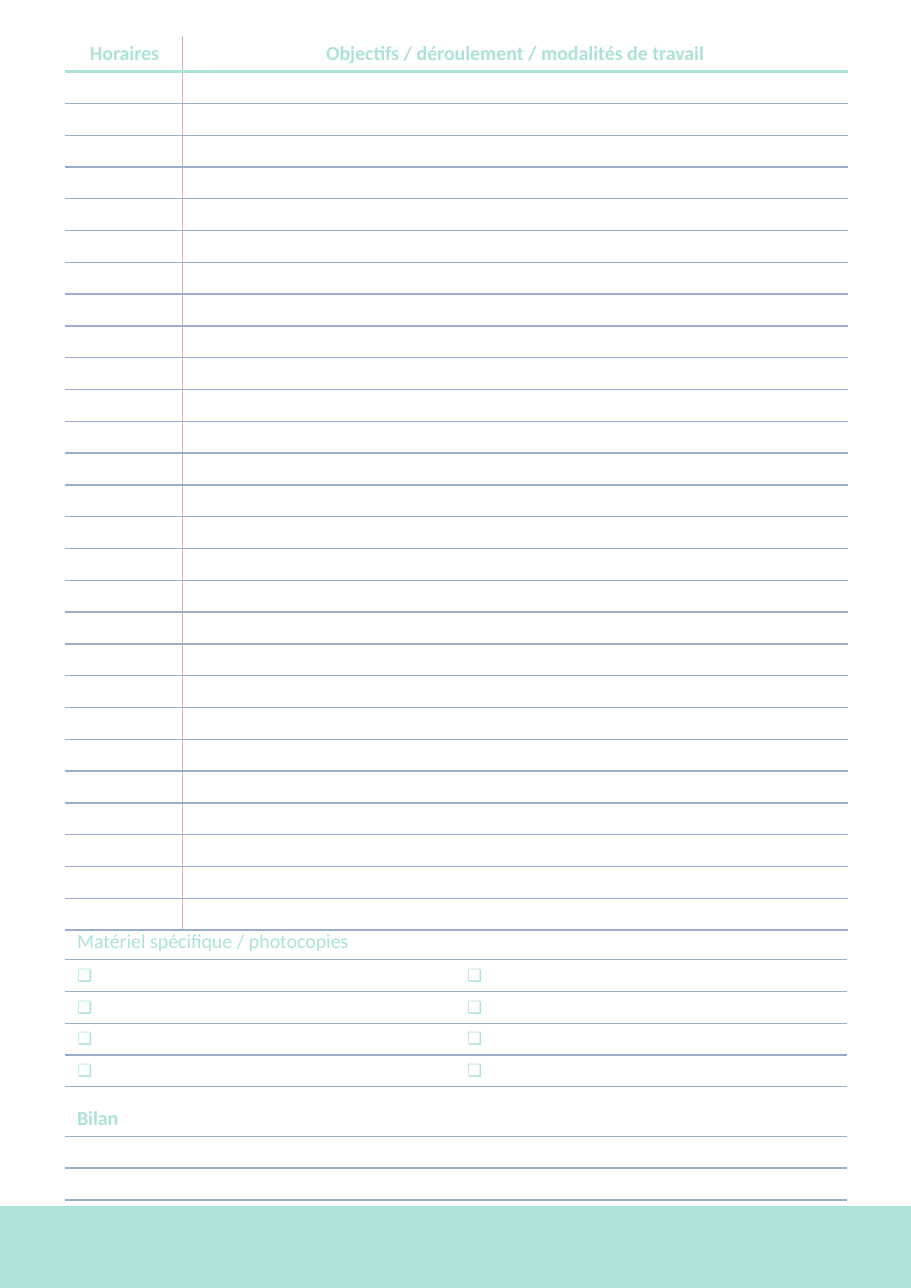
from lxml.etree import SubElement as Sub
from pptx import Presentation
from pptx.dml.color import RGBColor as Rgb
from pptx.enum.shapes import MSO_SHAPE as Shape
from pptx.enum.text import MSO_ANCHOR as Anchor, PP_ALIGN as Align
from pptx.oxml.ns import qn
from pptx.util import Inches, Pt

MINT, BLUE, PINK, WHITE = "ACE2D7", "9AADCD", "DCA9CC", "FFFFFF"
HEAD, GAP, STEP = 0.32, 0.13, 7.8 / 27


def paint(fmt, tone):
    """Give a fill one solid colour."""
    fmt.solid()
    fmt.fore_color.rgb = Rgb.from_string(tone)


def edge(cell, side, tone, width=1):
    """Draw one border of a cell."""
    line = Sub(cell._tc.get_or_add_tcPr(), qn(f"a:ln{side}"), w=str(Pt(width)))
    Sub(Sub(line, qn("a:solidFill")), qn("a:srgbClr"), val=tone)


def write(cell, text, size, bold=False, align=Align.LEFT):
    """Fill a cell with one line of text, or size it while empty."""
    cell.margin_top = cell.margin_bottom = Inches(0.02 if size > 5 else 0)
    cell.vertical_anchor = Anchor.MIDDLE
    para = cell.text_frame.paragraphs[0]
    para.text, para.alignment = text, align
    for run in para.runs:
        run.font.name, run.font.size, run.font.bold = "Calibri", Pt(size), bold
        run.font.color.rgb = Rgb.from_string(MINT)
    if not text:
        Sub(para._p, qn("a:endParaRPr"), sz=str(size * 100))


def grid(slide, box, cols, rows, rules, mid):
    """Add a white table with ruled rows and a middle line."""
    frame = slide.shapes.add_table(len(rows), len(cols), *map(Inches, box))
    table = frame.table
    table.first_row = table.horz_banding = False
    for col, width in zip(table.columns, cols):
        col.width = Inches(width)
    for i, high in enumerate(rows):
        table.rows[i].height = Inches(high)
        top = rules[i - 1] if i else (WHITE, 1)
        for j, cell in enumerate(table.rows[i].cells):
            edge(cell, "L", mid if j else WHITE)
            edge(cell, "R", WHITE if j else mid)
            edge(cell, "T", *top)
            edge(cell, "B", *rules[i])
            paint(cell.fill, WHITE)
            write(cell, "", 11 if high > GAP else 5)
    return table


def band(slide, box):
    """Draw the coloured strip at the foot of the page."""
    strip = slide.shapes.add_shape(Shape.RECTANGLE, *map(Inches, box))
    strip.shadow.inherit = False
    paint(strip.fill, MINT)
    paint(strip.line.fill, MINT)
    strip.line.width = Pt(1)


def review(slide, box):
    """Place the material checklist and the review lines."""
    rows = [HEAD] + [STEP] * 4 + [GAP, HEAD] + [STEP] * 2
    rules = [(WHITE if high == GAP else BLUE, 1) for high in rows]
    table = grid(slide, box, [box[2] / 2] * 2, rows, rules, WHITE)
    write(table.cell(0, 0), "Matériel spécifique / photocopies", 13)
    write(table.cell(6, 0), "Bilan", 13, True)
    for i in range(1, 5):
        for cell in table.rows[i].cells:
            write(cell, "❏", 11)


def plan(slide, box):
    """Place the timetable with its two headed columns."""
    rows = [HEAD] + [STEP] * 27
    rules = [(MINT, 2.25)] + [(BLUE, 1)] * 27
    table = grid(slide, box, [1.06, box[2] - 1.06], rows, rules, PINK)
    heads = "Horaires", "Objectifs / déroulement / modalités de travail"
    for cell, text in zip(table.rows[0].cells, heads):
        write(cell, text, 13, True, Align.CENTER)


def main():
    """Build the planner page and save it."""
    deck = Presentation()
    deck.slide_width, deck.slide_height = Inches(8.27), Inches(11.69)
    slide = deck.slides.add_slide(deck.slide_layouts[6])
    band(slide, (0, 10.95, 8.27, 0.74))
    review(slide, (0.6, 8.39, 7.08, 2.5))
    plan(slide, (0.6, 0.33, 7.09, 8.12))
    deck.save("out.pptx")


if __name__ == "__main__":
    main()
